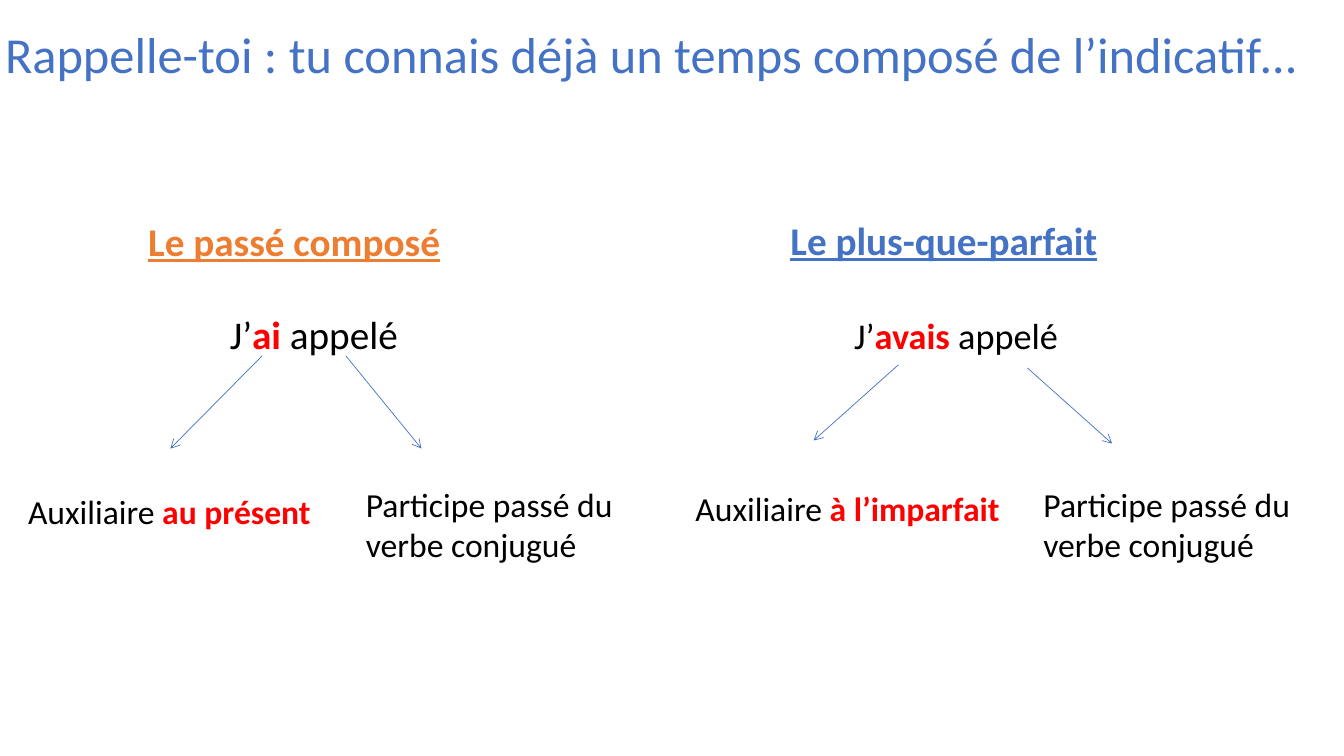
from pptx import Presentation
from pptx.dml.color import RGBColor
from pptx.enum.shapes import MSO_CONNECTOR
from pptx.enum.text import MSO_ANCHOR, MSO_AUTO_SIZE, PP_ALIGN
from pptx.oxml.ns import qn
from pptx.util import Inches, Pt
from lxml.etree import SubElement

BLUE = RGBColor(0x44, 0x72, 0xC4)
ORANGE = RGBColor(0xED, 0x7D, 0x31)
RED = RGBColor(0xFF, 0, 0)
BLACK = RGBColor(0, 0, 0)
FONT = "Calibri"

# Content: boxes are (left, top, width, height), arrows (x1, y1, x2, y2), in inches
TITLE = "Rappelle-toi : tu connais déjà un temps composé de l’indicatif…"
TITLE_BOX = (-0.05, 0.1, 13.2, 0.94)
PARTICIPLE = "Participe passé du verbe conjugué"
TENSES = [
    {
        "heading": "Le passé composé", "color": ORANGE,
        "heading_box": (1.37, 2.1, 3.64, 0.58),
        "auxiliary": "ai", "example_box": (2.18, 3.08, 1.91, 0.58),
        "example_size": 28, "example_spacing": 0.9,
        "arrows": [(2.6, 3.53, 1.69, 4.45), (3.43, 3.53, 4.18, 4.45)],
        "auxiliary_tense": "au présent", "auxiliary_box": (0.18, 4.82, 3.16, 0.5),
        "participle_box": (3.53, 4.75, 3.01, 0.91),
    },
    {
        "heading": "Le plus-que-parfait", "color": BLUE,
        "heading_box": (7.74, 2.09, 3.9, 0.58),
        "auxiliary": "avais", "example_box": (8.37, 3.18, 2.47, 0.43),
        "example_size": 25.9, "example_spacing": 0.7,
        "arrows": [(8.91, 3.62, 8.07, 4.37), (10.19, 3.65, 11.03, 4.4)],
        "auxiliary_tense": "à l’imparfait", "auxiliary_box": (6.8, 4.79, 3.26, 0.5),
        "participle_box": (10.25, 4.75, 3.01, 0.91),
    },
]


def add_runs(paragraph, runs, size):
    """Each run is (text, color, bold)."""
    for text, color, bold in runs:
        run = paragraph.add_run()
        run.text = text
        run.font.name = FONT
        run.font.size = Pt(size)
        run.font.color.rgb = color
        run.font.bold = bold


def fill_placeholder(shape, box, runs, size, anchor, spacing=0.9, before=10):
    shape.left, shape.top, shape.width, shape.height = map(Inches, box)
    frame = shape.text_frame
    frame.auto_size = MSO_AUTO_SIZE.NONE
    frame.vertical_anchor = anchor
    paragraph = frame.paragraphs[0]
    paragraph.alignment = PP_ALIGN.LEFT
    paragraph.line_spacing = spacing
    paragraph.space_before = Pt(before)
    properties = paragraph._p.get_or_add_pPr()
    properties.set("marL", "0")
    properties.set("indent", "0")
    SubElement(properties, qn("a:buNone"))
    add_runs(paragraph, runs, size)
    return paragraph


def add_label(slide, box, runs):
    frame = slide.shapes.add_textbox(*map(Inches, box)).text_frame
    frame.word_wrap = True
    frame.auto_size = MSO_AUTO_SIZE.SHAPE_TO_FIT_TEXT
    add_runs(frame.paragraphs[0], runs, 24)


def add_arrow(slide, ends):
    arrow = slide.shapes.add_connector(MSO_CONNECTOR.STRAIGHT, *map(Inches, ends))
    arrow.line.color.rgb = BLUE
    arrow.line.width = Pt(0.5)
    SubElement(arrow.line._get_or_add_ln(), qn("a:tailEnd"), type="arrow")
    SubElement(arrow._element.spPr, qn("a:effectLst"))


def main():
    presentation = Presentation()
    presentation.slide_width = Inches(13.33)
    presentation.slide_height = Inches(7.5)

    # Comparison layout: a title, then a heading and a body for each side
    slide = presentation.slides.add_slide(presentation.slide_layouts[4])
    title, *sides = slide.placeholders
    fill_placeholder(title, TITLE_BOX, [(TITLE, BLUE, False)], 36,
                     MSO_ANCHOR.MIDDLE, before=0)

    for tense, heading, example in zip(TENSES, sides[::2], sides[1::2]):
        # Heading and example sentence
        paragraph = fill_placeholder(
            heading, tense["heading_box"],
            [(tense["heading"], tense["color"], True)], 28, MSO_ANCHOR.BOTTOM)
        paragraph.runs[0].font.underline = True
        fill_placeholder(
            example, tense["example_box"],
            [("J’", BLACK, False), (tense["auxiliary"], RED, True),
             (" appelé", BLACK, False)],
            tense["example_size"], MSO_ANCHOR.TOP, tense["example_spacing"])

        # Arrows to the two parts of the verb
        for ends in tense["arrows"]:
            add_arrow(slide, ends)
        add_label(slide, tense["auxiliary_box"],
                  [("Auxiliaire ", BLACK, False),
                   (tense["auxiliary_tense"], RED, True)])
        add_label(slide, tense["participle_box"], [(PARTICIPLE, BLACK, False)])

    presentation.save("out.pptx")


if __name__ == "__main__":
    main()
